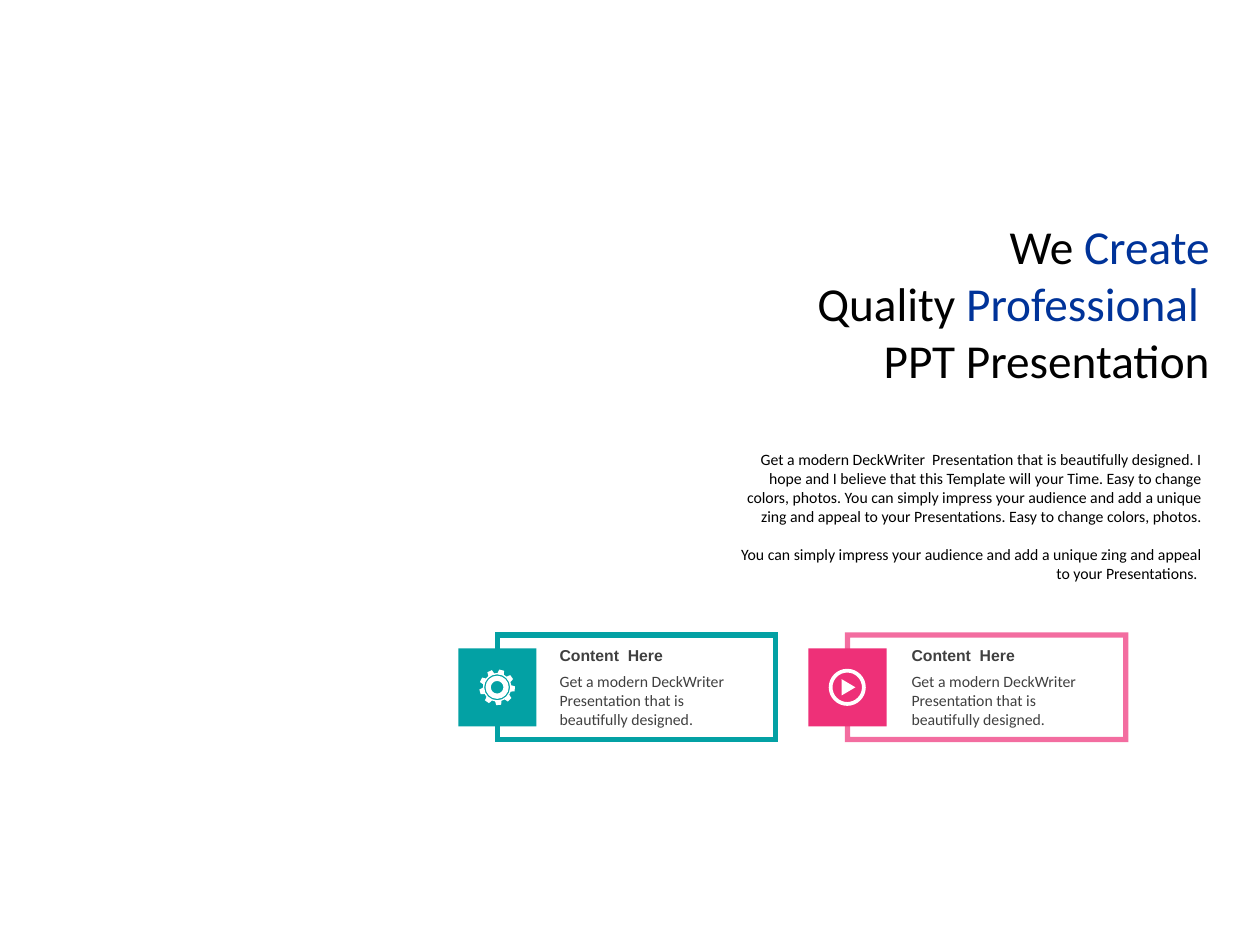
from math import cos, radians, sin

from lxml.etree import Element, SubElement
from pptx import Presentation
from pptx.dml.color import RGBColor
from pptx.enum.shapes import MSO_SHAPE as SHAPE
from pptx.enum.text import MSO_ANCHOR as ANCHOR, PP_ALIGN as ALIGN
from pptx.oxml.ns import qn
from pptx.util import Inches, Pt

TEAL = RGBColor(0x03, 0xA1, 0xA4)
PINK = RGBColor(0xEE, 0x30, 0x78)
BLUE = RGBColor(0x00, 0x33, 0x99)
GREY = RGBColor(0x40, 0x40, 0x40)
BLACK = RGBColor(0x00, 0x00, 0x00)
WHITE = RGBColor(0xFF, 0xFF, 0xFF)

UNIT = Inches(0.1)
COLS, ROWS = 100, 75
CARD_PITCH = 27.78
FINE = 1000
KAPPA = 0.55

TITLE = [
    [("We ", BLACK), ("Create", BLUE)],
    [("Quality ", BLACK), ("Professional ", BLUE)],
    [("PPT Presentation", BLACK)],
]
BODY = [
    [("Get a modern DeckWriter  Presentation that is beautifully designed. I hope "
      "and I believe that this Template will your Time. Easy to change colors, "
      "photos. You can simply impress your audience and add a unique zing and "
      "appeal to your Presentations. Easy to change colors, photos.", BLACK)],
    [("You can simply impress your audience and add a unique zing and appeal to "
      "your Presentations. ", BLACK)],
]
CARD_HEAD = [[("Content  Here", GREY)]]
CARD_TEXT = [[("Get a modern DeckWriter  Presentation that is beautifully designed.", GREY)]]


def grid(*cells):
    """Turn grid columns and rows into slide lengths."""
    return [round(c * UNIT) for c in cells]


def add_text(slide, box, paragraphs, size, font="Calibri", bold=False,
             align=ALIGN.LEFT, anchor=ANCHOR.TOP, insets=None, gap=0):
    """Add a wrapped text box with coloured runs."""
    tf = slide.shapes.add_textbox(*grid(*box)).text_frame
    tf.word_wrap = True
    tf.vertical_anchor = anchor
    if insets:
        tf.margin_left, tf.margin_top, tf.margin_right, tf.margin_bottom = grid(*insets)
    for i, runs in enumerate(paragraphs):
        p = tf.add_paragraph() if i else tf.paragraphs[0]
        p.alignment = align
        if i and gap:
            p.space_before = Pt(gap)
        for text, color in runs:
            r = p.add_run()
            r.text = text
            r.font.name, r.font.size, r.font.bold = font, Pt(size), bold
            r.font.color.rgb = color


def add_frame(slide, box, color, opacity):
    """Add a sharp-cornered outline that may be translucent."""
    sp = slide.shapes.add_shape(SHAPE.RECTANGLE, *grid(*box))
    sp.shadow.inherit = False
    sp.fill.background()
    sp.line.color.rgb = color
    sp.line.width = Pt(3)
    ln = sp._element.spPr.find(qn("a:ln"))
    SubElement(ln, qn("a:miter"), lim="800000")
    if opacity < 100:
        SubElement(ln.find(".//" + qn("a:srgbClr")), qn("a:alpha"), val=str(opacity * 1000))


def paint(sp, color):
    """Give a shape a plain fill without line or shadow."""
    sp.shadow.inherit = False
    sp.fill.solid()
    sp.fill.fore_color.rgb = color
    sp.line.fill.background()


def polar(center, radius, angle):
    """Return the point at a radius and angle in degrees."""
    a = radians(angle)
    return center[0] + radius * cos(a), center[1] + radius * sin(a)


def circle(center, radius):
    """Return a curved contour: a start, then two handles and an end per quarter."""
    x, y = center
    points = [(x + radius, y)]
    for dx, dy in [(1, 0), (0, 1), (-1, 0), (0, -1)]:
        ex, ey = -dy, dx
        for a, b in [(1, KAPPA), (KAPPA, 1), (0, 1)]:
            points.append((x + radius * (a * dx + b * ex), y + radius * (a * dy + b * ey)))
    return points, True


def gear(center):
    """Return the contours of a nine-toothed gear with a ring inside."""
    profile = [(1.13, -13), (1.42, -8), (1.42, 8), (1.13, 13)]
    teeth = [polar(center, r, 40 * k - 75 + a) for k in range(9) for r, a in profile]
    return [(teeth, False)] + [circle(center, r) for r in (1.03, 0.92, 0.5)]


def play(center):
    """Return the contours of a ringed play button."""
    x, y = center
    triangle = [(x - 0.45, y - 0.65), (x + 0.65, y), (x - 0.45, y + 0.65)]
    return [circle(center, 1.47), circle(center, 1.17), (triangle, False)]


def bend(sp, curved):
    """Turn the line triples of each curved contour into Bezier curves."""
    contour, triple = -1, []
    for step in list(sp._element.spPr.find(".//" + qn("a:path"))):
        if step.tag == qn("a:moveTo"):
            contour += 1
        elif step.tag == qn("a:lnTo") and curved[contour]:
            triple.append(step)
        if len(triple) == 3:
            curve = Element(qn("a:cubicBezTo"))
            step.addprevious(curve)
            for line in triple:
                curve.append(line[0])
                line.getparent().remove(line)
            triple = []


def add_icon(slide, contours):
    """Draw closed contours as one white freeform."""
    scaled = [[(x * FINE, y * FINE) for x, y in points] for points, _ in contours]
    builder = slide.shapes.build_freeform(*scaled[0][0], scale=UNIT / FINE)
    for i, points in enumerate(scaled):
        if i:
            builder.move_to(*points[0])
        builder.add_line_segments(points[1:], close=True)
    sp = builder.convert_to_shape()
    bend(sp, [curved for _, curved in contours])
    paint(sp, WHITE)


def add_card(slide, column, color, opacity, icon):
    """Add a framed card with an icon tile, a heading and a text."""
    left = 36.38 + column * CARD_PITCH
    add_frame(slide, (left + 3.1, 50.4, 22.1, 8.3), color, opacity)
    tile = slide.shapes.add_shape(SHAPE.RECTANGLE, *grid(left, 51.45, 6.2, 6.2))
    paint(tile, color)
    add_icon(slide, icon((left + 3.08, 54.55)))
    text_left = left + 7.05 + column * 0.15
    add_text(slide, (text_left, 50.75, 17.2, 2.5), CARD_HEAD, 9, "Arial", True,
             anchor=ANCHOR.MIDDLE)
    add_text(slide, (text_left, 52.83, 17.2, 5.6), CARD_TEXT, 9)


def main():
    """Build the slide and save it."""
    prs = Presentation()
    prs.slide_width, prs.slide_height = grid(COLS, ROWS)
    slide = prs.slides.add_slide(prs.slide_layouts[6])
    add_card(slide, 0, TEAL, 100, gear)
    add_card(slide, 1, PINK, 70, play)
    add_text(slide, (62.8, 17.2, 33.5, 13.6), TITLE, 27, align=ALIGN.RIGHT,
             anchor=ANCHOR.MIDDLE, insets=(0.3, 0, 0.3, 0))
    add_text(slide, (57, 35.2, 39.3, 11.6), BODY, 9, align=ALIGN.RIGHT, gap=11)
    prs.save("out.pptx")


if __name__ == "__main__":
    main()
